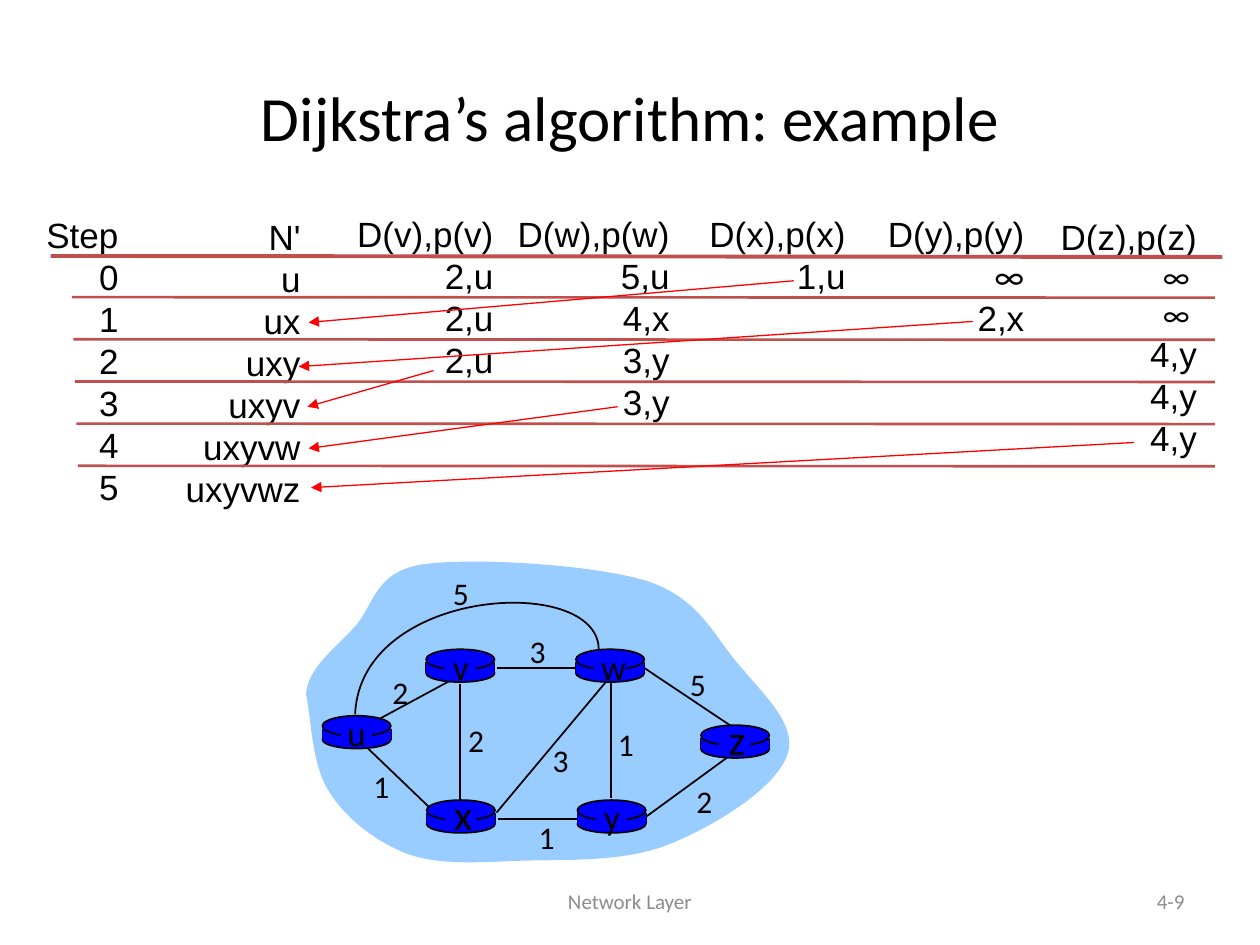
from lxml import etree
from pptx import Presentation
from pptx.dml.color import RGBColor
from pptx.enum.shapes import MSO_CONNECTOR, MSO_SHAPE
from pptx.enum.text import MSO_ANCHOR, PP_ALIGN
from pptx.oxml.ns import qn
from pptx.util import Cm, Pt

BLACK = RGBColor(0x00, 0x00, 0x00)
GREY = RGBColor(0x8C, 0x8C, 0x8C)
RULE = RGBColor(0xC0, 0x50, 0x4D)
RED = RGBColor(0xFF, 0x00, 0x00)
BLUE = RGBColor(0x00, 0x00, 0xFF)
SKY = RGBColor(0x99, 0xCC, 0xFF)

PITCH = 0.85
# left, top, width, entries
COLUMNS = [
    (0, 0.01, 1.98, ["Step", "0", "1", "2", "3", "4", "5"]),
    (2.82, 0.04, 2.83, ["N'", "u", "ux", "uxy", "uxyv", "uxyvw", "uxyvwz"]),
    (6.27, -0.01, 3.27, ["D(v),p(v)", "2,u", "2,u", "2,u"]),
    (9.48, -0.01, 3.61, ["D(w),p(w)", "5,u", "4,x", "3,y", "3,y"]),
    (13.39, -0.01, 3.25, ["D(x),p(x)", "1,u"]),
    (16.99, -0.01, 3.25, ["D(y),p(y)", "∞", "2,x"]),
    (20.47, 0.04, 3.25, ["D(z),p(z)", "∞ ", "∞ ", "4,y", "4,y", "4,y"]),
]
ARROWS = [
    (15.34, 1.49, 5.56, 2.33),
    (18.95, 2.31, 5.36, 3.22),
    (8.08, 3.3, 5.54, 4.03),
    (11.79, 4.03, 5.56, 4.87),
    (22.2, 4.75, 5.61, 5.66),
]
# two handles and an end for each curve
CLOUD = [
    (0.03, 2.24), (0.58, 1.85), (0.97, 1.42),
    (1.37, 0.99), (1.37, 0.3), (2.34, 0.15),
    (3.33, 0), (5.79, 0.15), (6.86, 0.48),
    (7.9, 0.81), (8.2, 1.55), (8.69, 2.13),
    (9.17, 2.72), (9.93, 3.38), (9.7, 3.99),
    (9.47, 4.67), (8.2, 5.44), (7.32, 5.79),
    (6.43, 6.15), (5.26, 6.1), (4.39, 6.12),
    (3.51, 6.15), (2.72, 6.22), (2.06, 5.99),
    (1.4, 5.74), (0.79, 5.26), (0.46, 4.72),
    (0.1, 4.17), (0.1, 3.15), (0, 2.77),
]
ARC = [(5.87, 0.33), (1.09, 0.61), (0.99, 3.17)]
# name, left, top, label centre from the router's corner, text size
ROUTERS = [
    ("u", 0.33, 3.2, 0.69, 0.34, 20), ("v", 2.42, 1.86, 0.7, 0.34, 20),
    ("w", 5.44, 1.86, 0.71, 0.34, 20), ("x", 2.43, 4.9, 0.74, 0.28, 24),
    ("y", 5.47, 4.9, 0.7, 0.32, 20), ("z", 7.96, 3.39, 0.73, 0.27, 24),
]
# ends of the link, then its cost and the centre of the cost
LINKS = [
    (1.5, 3.25, 3, 2.44, "2", 1.9, 2.71),
    (3.1, 2.56, 3.1, 4.92, "2", 3.43, 3.68),
    (1.25, 3.86, 2.47, 5.03, "1", 1.52, 4.62),
    (3.84, 5.15, 6.05, 2.51, "3", 5.13, 4.09),
    (3.86, 5.28, 5.46, 5.28, "1", 4.85, 5.65),
    (6.15, 2.54, 6.15, 4.85, "1", 6.45, 3.76),
    (6.86, 5.23, 8.49, 4.04, "2", 8.03, 4.92),
    (6.81, 2.23, 8.56, 3.4, "5", 7.9, 2.56),
    (3.84, 2.23, 5.44, 2.23, "3", 4.67, 1.9),
]


def text(slide, x, y, w, h, lines, size, font="Calibri", color=BLACK,
         align=PP_ALIGN.CENTER, anchor=MSO_ANCHOR.MIDDLE, wrap=False):
    frame = slide.shapes.add_textbox(Cm(x), Cm(y), Cm(w), Cm(h)).text_frame
    frame.word_wrap = wrap
    frame.vertical_anchor = anchor
    frame.text = "\n".join(lines)
    for para in frame.paragraphs:
        para.alignment = align
        for run in para.runs:
            run.font.size = Pt(size)
            run.font.name = font
            run.font.color.rgb = color
    return frame


def line(slide, x1, y1, x2, y2, color=BLACK, width=1, arrow=False):
    link = slide.shapes.add_connector(
        MSO_CONNECTOR.STRAIGHT, Cm(x1), Cm(y1), Cm(x2), Cm(y2))
    link.line.color.rgb = color
    link.line.width = Pt(width)
    props = link.element.spPr
    if arrow:
        etree.SubElement(props.find(qn("a:ln")), qn("a:tailEnd"), type="triangle")
    etree.SubElement(props, qn("a:effectLst"))


def paint(shape, fill=None, edge=None):
    shape.shadow.inherit = False
    if fill is None:
        shape.fill.background()
    else:
        shape.fill.solid()
        shape.fill.fore_color.rgb = fill
    if edge is None:
        shape.line.fill.background()
    else:
        shape.line.color.rgb = edge
        shape.line.width = Pt(1)


def block(slide, kind, x, y, w, h, edge=None):
    paint(slide.shapes.add_shape(kind, Cm(x), Cm(y), Cm(w), Cm(h)), BLUE, edge)


def curve(slide, x, y, start, points, closed):
    """Build an outline through all points, then join each three into one cubic curve."""
    pen = slide.shapes.build_freeform(Cm(x + start[0]), Cm(y + start[1]))
    pen.add_line_segments([(Cm(x + a), Cm(y + b)) for a, b in points], close=closed)
    shape = pen.convert_to_shape()
    parts = list(shape.element.iter(qn("a:lnTo")))
    for i in range(0, len(points), 3):
        cubic = etree.Element(qn("a:cubicBezTo"))
        parts[i].addprevious(cubic)
        for part in parts[i:i + 3]:
            cubic.append(part[0])
            part.getparent().remove(part)
    return shape


def steps_table(slide, x, y):
    for left, top, width, items in COLUMNS:
        frame = text(slide, x + left, y + top, width, len(items) * PITCH + 0.25,
                     items, 20, "Arial", align=PP_ALIGN.RIGHT, anchor=MSO_ANCHOR.TOP)
        for para in frame.paragraphs:
            if "∞" in para.text:
                font = para.runs[0].font
                font.name = "Calibri"
                font.size = Pt(18 if para.text.endswith(" ") else 20)
    line(slide, x + 0.36, y + 0.99, x + 23.98, y + 1.01, RULE, 2.25)
    for i in range(5):
        row = y + 1.82 + i * PITCH
        line(slide, x + 0.79 + i * 0.03, row, x + 23.83, row + 0.01, RULE, 1.5)
    for x1, y1, x2, y2 in ARROWS:
        line(slide, x + x1, y + y1, x + x2, y + y2, RED, 0.75, arrow=True)


def label(slide, x, y, word, size):
    """Centre a short word on a point."""
    w, h = 0.9, size * 0.04 + 0.3
    text(slide, x - w / 2, y - h / 2, w, h, [word], size)


def router(slide, x, y):
    wide = 1.38
    block(slide, MSO_SHAPE.OVAL, x, y + 0.3, wide, 0.36, BLACK)
    for side in (x, x + wide):
        line(slide, side, y + 0.26, side, y + 0.48)
    block(slide, MSO_SHAPE.RECTANGLE, x, y + 0.26, wide, 0.22)
    block(slide, MSO_SHAPE.OVAL, x, y, wide, 0.41, BLACK)
    block(slide, MSO_SHAPE.RECTANGLE, x + 0.37, y + 0.05, 0.63, 0.58)


def network(slide, x, y):
    paint(curve(slide, x, y, (0, 2.77), CLOUD, True), fill=SKY)
    for x1, y1, x2, y2, *_ in LINKS:
        line(slide, x + x1, y + y1, x + x2, y + y2)
    paint(curve(slide, x, y, (5.9, 1.85), ARC, False), edge=BLACK)
    for name, left, top, across, down, size in ROUTERS:
        router(slide, x + left, y + top)
        label(slide, x + left + across, y + top + down, name, size)
    for *_, cost, left, top in LINKS:
        label(slide, x + left, y + top, cost, 18)
    label(slide, x + 3.12, y + 0.72, "5", 18)


def main():
    deck = Presentation()
    deck.slide_width, deck.slide_height = Cm(25.4), Cm(19.05)
    slide = deck.slides.add_slide(deck.slide_layouts[6])
    text(slide, 8.68, 17.65, 8.04, 1.02, ["Network Layer"], 12, color=GREY, wrap=True)
    text(slide, 18.21, 17.65, 5.92, 1.02, ["4-9"], 12, color=GREY,
         align=PP_ALIGN.RIGHT, wrap=True)
    text(slide, 1.27, 0.76, 22.86, 3.18, ["Dijkstra’s algorithm: example"], 36, wrap=True)
    steps_table(slide, 0.66, 4.17)
    network(slide, 6.17, 11.23)
    deck.save("out.pptx")


if __name__ == "__main__":
    main()
